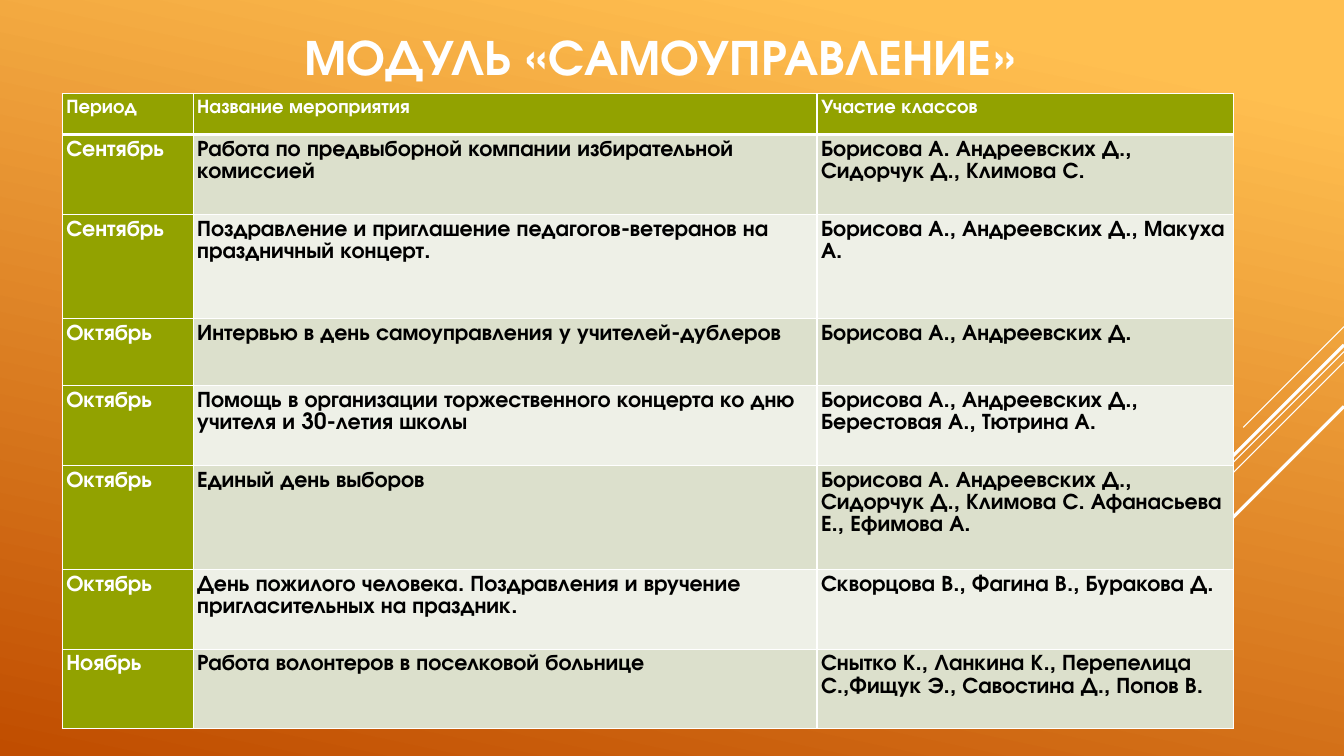
from typing import NamedTuple

from lxml import etree
from pptx import Presentation, util as u
from pptx.dml.color import RGBColor
from pptx.enum import shapes, text
from pptx.oxml.ns import qn

FONT = "TeX Gyre Adventor"
WHITE, BLACK, OLIVE = "FFFFFF", "000000", "92A200"
BANDS = ("DCE0CC", "EEF0E7")
SLIDE_W, SLIDE_H = 33.87, 19.05


class Ray(NamedTuple):
    """A diagonal from the right edge, running equally far left and down."""
    top: float
    reach: float
    width: float


class Event(NamedTuple):
    height: float
    month: str
    name: str
    people: str


RAYS = [
    Ray(8.23, 2.54, 0.75),
    Ray(8.86, 8.28, 0.75),
    Ray(9.12, 5.27, 0.75),
    Ray(8.69, 4.85, 2.25),
    Ray(10.24, 3.53, 2.25),
]
COLUMNS = (3.3, 15.72, 10.49)
HEADER = Event(1.03, "Период", "Название мероприятия", "Участие классов")
EVENTS = [
    Event(2.01, "Сентябрь", "Работа по предвыборной компании избирательной комиссией",
          "Борисова А. Андреевских Д., Сидорчук Д., Климова С."),
    Event(2.62, "Сентябрь",
          "Поздравление и приглашение педагогов-ветеранов на праздничный концерт.",
          "Борисова А., Андреевских Д., Макуха А."),
    Event(1.7, "Октябрь", "Интервью в день самоуправления у учителей-дублеров",
          "Борисова А., Андреевских Д."),
    Event(2.01, "Октябрь",
          "Помощь в организации торжественного концерта ко дню учителя и 30-летия школы",
          "Борисова А., Андреевских Д., Берестовая А., Тютрина А."),
    Event(2.62, "Октябрь", "Единый день выборов",
          "Борисова А. Андреевских Д., Сидорчук Д., Климова С. Афанасьева Е., Ефимова А."),
    Event(2.01, "Октябрь",
          "День пожилого человека. Поздравления и вручение пригласительных на праздник.",
          "Скворцова В., Фагина В., Буракова Д."),
    Event(2.01, "Ноябрь", "Работа волонтеров в поселковой больнице",
          "Снытко К., Ланкина К., Перепелица С.,Фищук Э., Савостина Д., Попов В."),
]


def rgb(value: str) -> RGBColor:
    return RGBColor.from_string(value)


def format_text(p, size: float, color: str) -> None:
    for r in p.runs:
        r.font.name, r.font.size, r.font.bold = FONT, u.Pt(size), True
        r.font.color.rgb = rgb(color)


def paint_background(s) -> None:
    fill = s.background.fill
    fill.gradient()
    fill.gradient_angle = 258
    for stop, (position, color) in zip(fill.gradient_stops, ((0.1, "FFBF50"), (1, "C04D00"))):
        stop.position = position
        stop.color.rgb = rgb(color)


def add_ray(s, ray: Ray) -> None:
    sp = s.shapes.add_connector(
        shapes.MSO_CONNECTOR.STRAIGHT, u.Cm(SLIDE_W), u.Cm(ray.top),
        u.Cm(SLIDE_W - ray.reach), u.Cm(ray.top + ray.reach))
    sp.line.color.rgb = rgb(WHITE)
    sp.line.width = u.Pt(ray.width)
    etree.SubElement(sp._element.spPr, qn("a:effectLst"))


def add_title(s, title: str) -> None:
    sp = s.shapes.add_textbox(u.Cm(4.78), u.Cm(0), u.Cm(23.7), u.Cm(4.19))
    tf = sp.text_frame
    tf.word_wrap = True
    tf.vertical_anchor = text.MSO_ANCHOR.MIDDLE
    tf.margin_bottom = u.Cm(1.52)
    tf.text = title
    p = tf.paragraphs[0]
    p.alignment = text.PP_ALIGN.CENTER
    format_text(p, 36, WHITE)


def set_borders(cell, top: float, bottom: float) -> None:
    tc_pr = cell._tc.get_or_add_tcPr()
    for side, width in (("L", 1), ("R", 1), ("T", top), ("B", bottom)):
        ln = etree.SubElement(tc_pr, qn(f"a:ln{side}"), w=str(u.Pt(width)))
        fill = etree.SubElement(ln, qn("a:solidFill"))
        etree.SubElement(fill, qn("a:srgbClr"), val=WHITE)


def fill_cell(cell, content: str, row: int, col: int) -> None:
    accent = row == 0 or col == 0
    set_borders(cell, 3 if row == 1 else 1, 3 if row == 0 else 1)
    cell.fill.solid()
    cell.fill.fore_color.rgb = rgb(OLIVE if accent else BANDS[(row - 1) % 2])
    cell.margin_left = cell.margin_right = u.Cm(0.1)
    cell.margin_top = cell.margin_bottom = u.Cm(0.1)
    cell.text_frame.text = content
    p = cell.text_frame.paragraphs[0]
    p.line_spacing = 1.07
    format_text(p, 14 if row == 0 else 16, WHITE if accent else BLACK)


def add_schedule(s, rows: list[Event]) -> None:
    frame = s.shapes.add_table(
        len(rows), len(COLUMNS), u.Cm(1.57), u.Cm(2.36),
        u.Cm(sum(COLUMNS)), u.Cm(sum(event.height for event in rows)))
    table = frame.table
    table.horz_banding = False
    for column, width in zip(table.columns, COLUMNS):
        column.width = u.Cm(width)
    for row, event in enumerate(rows):
        table.rows[row].height = u.Cm(event.height)
        for col, content in enumerate(event[1:]):
            fill_cell(table.cell(row, col), content, row, col)


def main() -> None:
    prs = Presentation()
    prs.slide_width, prs.slide_height = u.Cm(SLIDE_W), u.Cm(SLIDE_H)
    s = prs.slides.add_slide(prs.slide_layouts[6])
    paint_background(s)
    for ray in RAYS:
        add_ray(s, ray)
    add_title(s, "МОДУЛЬ «САМОУПРАВЛЕНИЕ»")
    add_schedule(s, [HEADER, *EVENTS])
    prs.save("out.pptx")


if __name__ == "__main__":
    main()
